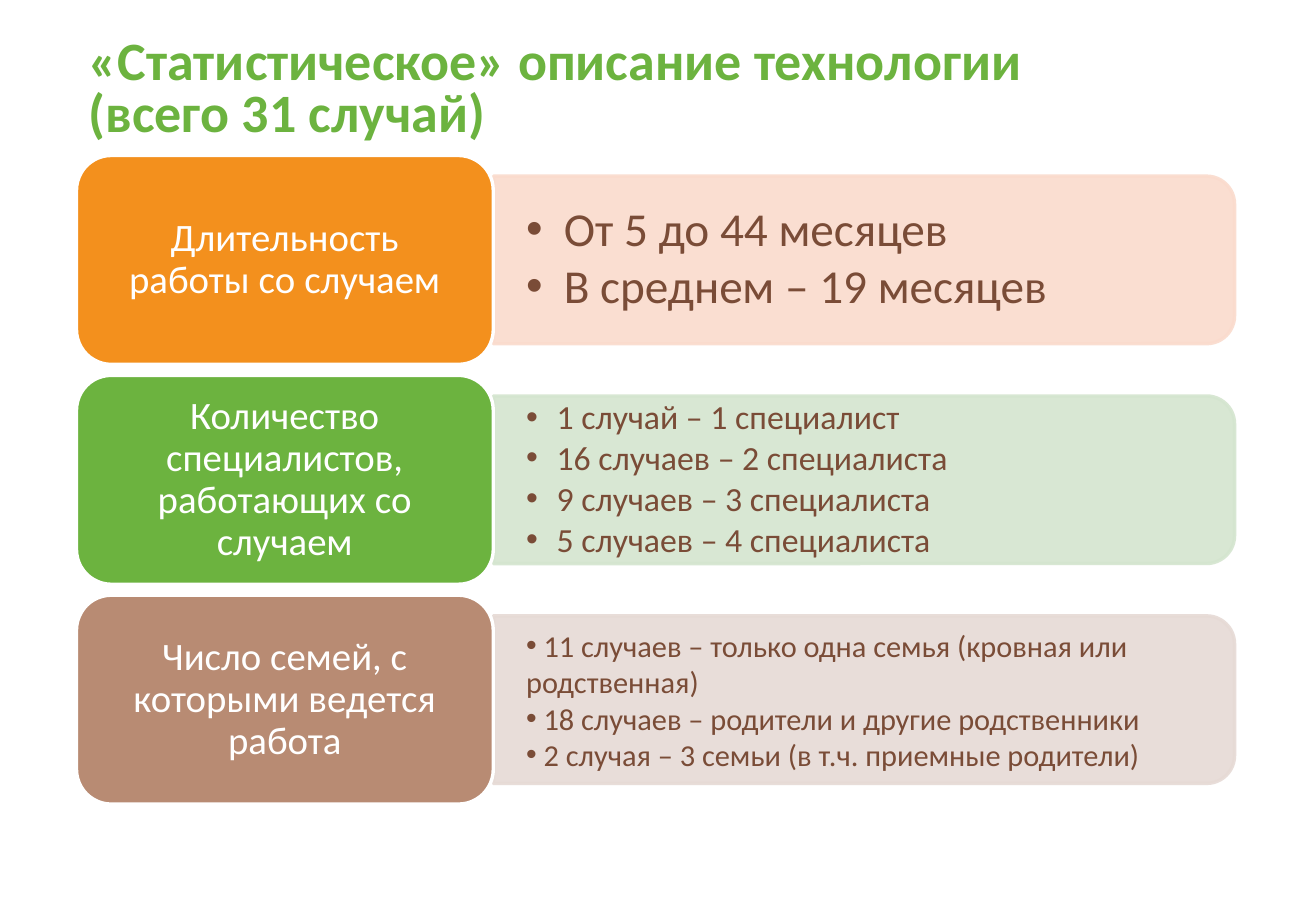
import pptx
import pptx.dml.color
import pptx.enum.shapes
import pptx.enum.text
import pptx.oxml
import pptx.oxml.ns
import pptx.util

Inches = pptx.util.Inches
Pt = pptx.util.Pt
SHAPES = pptx.enum.shapes.MSO_SHAPE
ALIGN = pptx.enum.text.PP_ALIGN
MIDDLE = pptx.enum.text.MSO_ANCHOR.MIDDLE

FONT = "Calibri"
GREEN = "6CB33F"
BROWN = "7A4C37"
WHITE = "FFFFFF"
LABEL_WIDTH = 3.43
PANEL_HEIGHT = 1.38
ROW_HEIGHT = 1.72
ROW_PITCH = 1.81

TOPICS = [
    ("Длительность работы со случаем", "F3901D", "FADBCD", 28, 0.31, 0.9,
     ["От 5 до 44 месяцев", "В среднем – 19 месяцев"]),
    ("Количество специалистов, работающих со случаем", GREEN, "D4E5CF", 20, 0.25, 0.9,
     ["1 случай – 1 специалист", "16 случаев – 2 специалиста",
      "9 случаев – 3 специалиста", "5 случаев – 4 специалиста"]),
    ("Число семей, с которыми ведется работа", "B88B73", "E6DAD5", 18, 0, 1,
     [" 11 случаев – только одна семья (кровная или родственная)",
      " 18 случаев – родители и другие родственники",
      " 2 случая – 3 семьи (в т.ч. приемные родители)"]),
]


def rgb(color):
    return pptx.dml.color.RGBColor.from_string(color)


def place(part, left, top, width, height):
    part.left, part.top = Inches(left), Inches(top)
    part.width, part.height = Inches(width), Inches(height)


def set_frame(frame, side, vertical):
    frame.word_wrap = True
    frame.auto_size = pptx.enum.text.MSO_AUTO_SIZE.NONE
    frame.vertical_anchor = MIDDLE
    frame.margin_left = frame.margin_right = Inches(side)
    frame.margin_top = frame.margin_bottom = Inches(vertical)


def set_paragraph(paragraph, size, color, align, spacing, bold=False):
    paragraph.alignment = align
    paragraph.line_spacing = spacing
    paragraph.space_before = Pt(0)
    for run in paragraph.runs:
        run.font.name = FONT
        run.font.size = Pt(size)
        run.font.bold = bold
        run.font.color.rgb = rgb(color)


def add_block(slide, preset, box, fill, line):
    block = slide.shapes.add_shape(preset, *map(Inches, box))
    block.shadow.inherit = False
    block.fill.solid()
    block.fill.fore_color.rgb = rgb(fill)
    block.line.color.rgb = rgb(line)
    block.line.width = Pt(2)
    return block


def set_bullet(paragraph, indent):
    properties = paragraph._p.get_or_add_pPr()
    properties.set("marL", str(Inches(indent)))
    properties.set("indent", str(-Inches(indent)))
    bullet = pptx.oxml.parse_xml(
        f'<a:buChar {pptx.oxml.ns.nsdecls("a")} char="•"/>')
    properties.append(bullet)


def add_heading(slide, left, top, width, height):
    heading = slide.shapes.title
    place(heading, left, top, width, height)
    set_frame(heading.text_frame, 0.1, 0.05)
    heading.text_frame.text = "«Статистическое» описание технологии\v(всего 31 случай)"
    set_paragraph(heading.text_frame.paragraphs[0], 32, GREEN, ALIGN.LEFT, 0.8, True)


def add_panel(slide, left, middle, width, tint):
    center = left + width / 2
    box = (center - PANEL_HEIGHT / 2, middle - width / 2, PANEL_HEIGHT, width)
    panel = add_block(slide, SHAPES.ROUND_2_SAME_RECTANGLE, box, tint, tint)
    panel.rotation = 90
    for color in panel._element.spPr.iter(pptx.oxml.ns.qn("a:srgbClr")):
        color.append(pptx.oxml.parse_xml(
            f'<a:alpha {pptx.oxml.ns.nsdecls("a")} val="90000"/>'))


def add_facts(slide, facts, left, middle, width, topic):
    _, _, _, size, indent, spacing, lines = topic
    slide.shapes._spTree.append(facts._element)
    height = PANEL_HEIGHT - 0.14
    place(facts, left, middle - height / 2, width, height)
    set_frame(facts.text_frame, 0.27, 0.14)
    facts.text_frame.text = "\n".join(lines)
    for paragraph in facts.text_frame.paragraphs:
        set_bullet(paragraph, indent)
        set_paragraph(paragraph, size, BROWN, ALIGN.LEFT, spacing)
        paragraph.space_after = Pt(round(size * 0.13, 1) if indent else 0)


def add_topic(slide, facts, left, top, width, height, topic):
    name, color, tint = topic[:3]
    middle = top + height / 2
    panel_left = left + LABEL_WIDTH
    panel_width = width - LABEL_WIDTH
    add_panel(slide, panel_left, middle, panel_width, tint)
    add_facts(slide, facts, panel_left, middle, panel_width - 0.07, topic)
    label = add_block(slide, SHAPES.ROUNDED_RECTANGLE,
                      (left, top, LABEL_WIDTH, height), color, WHITE)
    set_frame(label.text_frame, 0.18, 0.13)
    label.text_frame.text = name
    set_paragraph(label.text_frame.paragraphs[0], 23, WHITE, ALIGN.CENTER, 0.9)


def main():
    presentation = pptx.Presentation()
    presentation.slide_width = Inches(10.83)
    presentation.slide_height = Inches(7.5)
    comparison = presentation.slide_layouts.get_by_name("Comparison")
    slide = presentation.slides.add_slide(comparison)
    bodies = list(slide.placeholders)[1:]
    add_heading(slide, 0.63, 0.22, 8.57, 1.06)
    for row, (facts, topic) in enumerate(zip(bodies, TOPICS)):
        add_topic(slide, facts, 0.63, 1.28 + row * ROW_PITCH, 9.53, ROW_HEIGHT, topic)
    for unused in bodies[len(TOPICS):]:
        slide.shapes._spTree.remove(unused._element)
    presentation.save("out.pptx")


if __name__ == "__main__":
    main()
